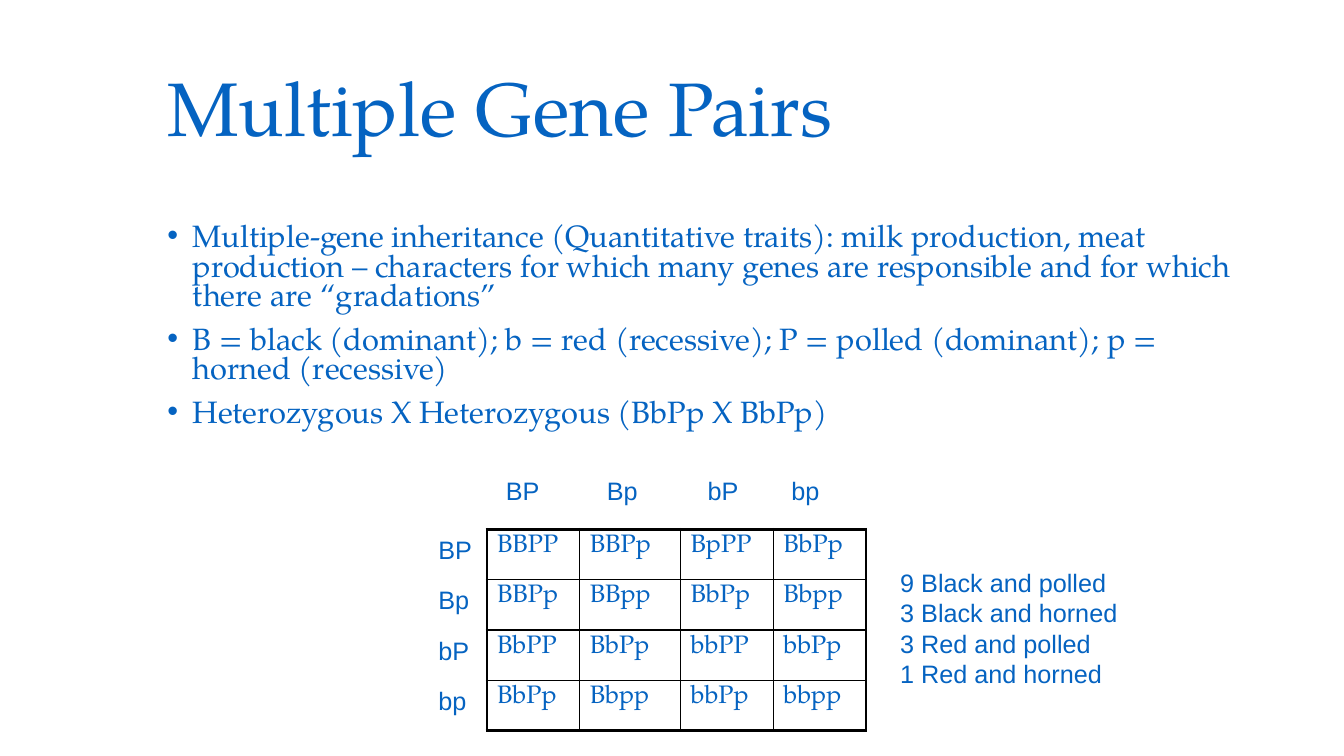
from pptx import Presentation
from pptx.dml.color import RGBColor
from pptx.enum.text import MSO_ANCHOR, MSO_AUTO_SIZE, PP_ALIGN
from pptx.oxml.ns import qn
from pptx.util import Inches, Pt
from lxml.etree import SubElement

COLORS = {"text": "0563C1", "border": "000000"}
SERIF, SANS = "TeX Gyre Pagella", "Arial"
THICK, THIN = 2.25, 1

GAMETES = ["BP", "Bp", "bP", "bp"]
GAMETE_LEFTS = [4.92, 5.92, 6.92, 7.75]
OFFSPRING = [
    ["BBPP", "BBPp", "BpPP", "BbPp"],
    ["BBPp", "BBpp", "BbPp", "Bbpp"],
    ["BbPP", "BbPp", "bbPP", "bbPp"],
    ["BbPp", "Bbpp", "bbPp", "bbpp"],
]
COLUMN_WIDTHS = [0.92, 1, 0.92, 0.92]
SQUARE_LEFT, SQUARE_TOP, ROW_HEIGHT = 4.83, 5.25, 0.5
TRAITS = [
    "Multiple-gene inheritance (Quantitative traits): milk production, meat "
    "production – characters for which many genes are responsible and for "
    "which there are “gradations”",
    "B = black (dominant); b = red (recessive); P = polled (dominant); "
    "p = horned (recessive)",
    "Heterozygous X Heterozygous (BbPp X BbPp)",
]
RATIOS = ["9 Black and polled", "3 Black and horned",
          "3 Red and polled", "1 Red and horned"]


class GeneSlide:
    def __init__(self, deck):
        self.slide = deck.slides.add_slide(deck.slide_layouts[1])

    def place(self, shape, left, top, width, height):
        shape.left, shape.top = Inches(left), Inches(top)
        shape.width, shape.height = Inches(width), Inches(height)

    def style(self, paragraph, font_name, size):
        for run in paragraph.runs:
            run.font.name = font_name
            run.font.size = Pt(size)
            run.font.color.rgb = RGBColor.from_string(COLORS["text"])

    def title(self, text, *box):
        heading = self.slide.shapes.title
        self.place(heading, *box)
        frame = heading.text_frame
        frame.text = text
        frame.auto_size = MSO_AUTO_SIZE.NONE
        frame.vertical_anchor = MSO_ANCHOR.MIDDLE
        frame.paragraphs[0].alignment = PP_ALIGN.LEFT
        frame.paragraphs[0].line_spacing = 0.9
        self.style(frame.paragraphs[0], SERIF, 54)

    def bullets(self, items, *box):
        body = self.slide.placeholders[1]
        self.place(body, *box)
        frame = body.text_frame
        frame.text = "\n".join(items)
        frame.auto_size = MSO_AUTO_SIZE.NONE
        for index, paragraph in enumerate(frame.paragraphs):
            properties = paragraph._p.get_or_add_pPr()
            properties.set("marL", str(Inches(0.25)))
            properties.set("indent", str(-Inches(0.25)))
            SubElement(properties, qn("a:buFont"), typeface=SANS)
            SubElement(properties, qn("a:buChar"), char="•")
            paragraph.line_spacing = 0.8
            paragraph.space_before = Pt(10 if index else 0)
            self.style(paragraph, SERIF, 22)

    def label(self, lines, left, top, width=0.54, height=0.4):
        box = self.slide.shapes.add_textbox(
            Inches(left), Inches(top), Inches(width), Inches(height))
        frame = box.text_frame
        frame.text = "\n".join(lines)
        frame.word_wrap = False
        frame.auto_size = MSO_AUTO_SIZE.SHAPE_TO_FIT_TEXT
        for paragraph in frame.paragraphs:
            self.style(paragraph, SANS, 18)

    def border(self, cell, side, width):
        line = SubElement(cell._tc.get_or_add_tcPr(), qn(f"a:ln{side}"),
                          w=str(Pt(width)))
        fill = SubElement(line, qn("a:solidFill"))
        SubElement(fill, qn("a:srgbClr"), val=COLORS["border"])

    def table(self, rows, widths, left, top, row_height):
        grid = self.slide.shapes.add_table(
            len(rows), len(widths), Inches(left), Inches(top),
            Inches(sum(widths)), Inches(row_height * len(rows))).table
        grid.first_row = grid.horz_banding = False
        for column, width in zip(grid.columns, widths):
            column.width = Inches(width)
        last_row, last_column = len(rows) - 1, len(widths) - 1
        for r, genotypes in enumerate(rows):
            for c, genotype in enumerate(genotypes):
                cell = grid.cell(r, c)
                cell.text_frame.text = genotype
                self.style(cell.text_frame.paragraphs[0], SERIF, 18)
                # Thick frame outside, thin lines inside
                outer = {"L": c == 0, "R": c == last_column,
                         "T": r == 0, "B": r == last_row}
                for side, is_outer in outer.items():
                    self.border(cell, side, THICK if is_outer else THIN)
                cell.fill.background()


def main():
    deck = Presentation()
    deck.slide_width, deck.slide_height = Inches(13.33), Inches(7.5)
    page = GeneSlide(deck)

    # Title and explanation
    page.title("Multiple Gene Pairs", 1.56, 0.33, 11, 1.57)
    page.bullets(TRAITS, 1.56, 2.17, 11, 2.17)

    # Punnett square with gametes along the top and left
    for row, (gamete, left) in enumerate(zip(GAMETES, GAMETE_LEFTS)):
        page.label([gamete], left, 4.67)
        page.label([gamete], 4.25, SQUARE_TOP + row * ROW_HEIGHT)
    page.table(OFFSPRING, COLUMN_WIDTHS, SQUARE_LEFT, SQUARE_TOP, ROW_HEIGHT)

    # Resulting ratios
    page.label(RATIOS, 8.83, 5.58, 2.38, 1.31)

    deck.save("out.pptx")


if __name__ == "__main__":
    main()
